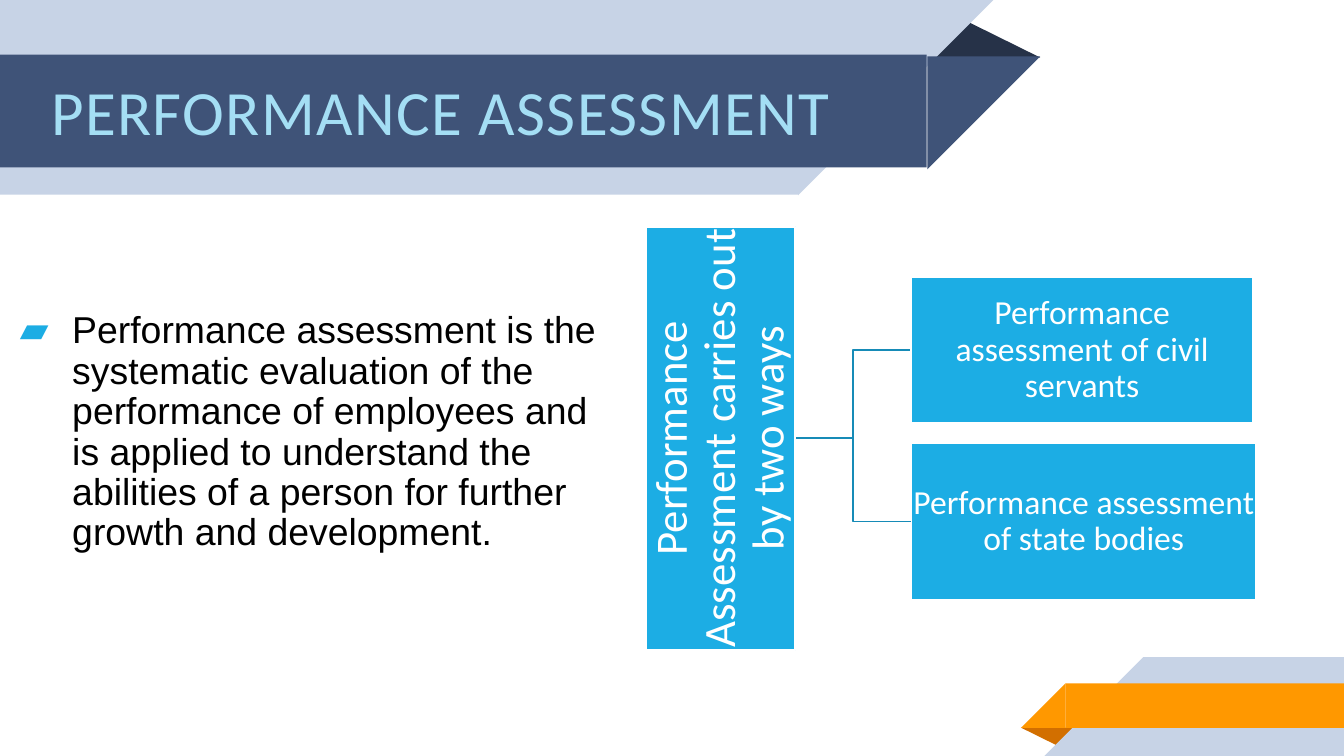
from lxml.etree import SubElement
from pptx import Presentation
from pptx.dml.color import RGBColor
from pptx.enum.shapes import MSO_CONNECTOR, MSO_SHAPE
from pptx.enum.text import MSO_ANCHOR, MSO_AUTO_SIZE, PP_ALIGN
from pptx.oxml.ns import qn
from pptx.util import Pt

COLORS = {
    "pale": "C7D3E6",
    "navy": "3F5378",
    "dark_navy": "263248",
    "orange": "FF9800",
    "dark_orange": "D26F00",
    "title": "A4DEF4",
    "accent": "1CADE4",
    "branch": "168BB7",
    "white": "FFFFFF",
    "black": "000000",
}


def color(name):
    return RGBColor.from_string(COLORS[name])


def add_block(slide, kind, box, fill, rotation=0):
    block = slide.shapes.add_shape(kind, *map(Pt, box))
    block.shadow.inherit = False
    block.fill.solid()
    block.fill.fore_color.rgb = color(fill)
    block.line.fill.background()
    block.rotation = rotation
    return block


def add_corner(slide, left, top, side, fill, rotation):
    add_block(slide, MSO_SHAPE.RIGHT_TRIANGLE, (left, top, side, side), fill, rotation)


def add_fold(slide, box, fill, rotation=0):
    fold = add_block(slide, MSO_SHAPE.ISOSCELES_TRIANGLE, box, fill, rotation)
    fold.adjustments[0] = 0.324


def add_ribbons(slide):
    rectangle = MSO_SHAPE.RECTANGLE
    add_fold(slide, (661, 13.7, 82, 27.4), "dark_navy")
    add_block(slide, rectangle, (0, 0, 570, 139), "pale")
    add_corner(slide, 570, 0, 139.5, "pale", 90)
    add_block(slide, rectangle, (0, 39, 662, 80.6), "navy")
    add_corner(slide, 662.4, 40.3, 80.6, "navy", 90)
    add_fold(slide, (729.4, 519.8, 41, 13.7), "dark_orange", 180)
    add_block(slide, rectangle, (816.5, 469.4, 143.5, 70.6), "pale")
    add_corner(slide, 745.9, 469.4, 70.6, "pale", 270)
    add_block(slide, rectangle, (761, 488.2, 199, 31.7), "orange")
    add_corner(slide, 729.3, 488.2, 31.7, "orange", 270)


def write(frame, text, font, size, ink, spacing, align, inset, anchor):
    frame.word_wrap = True
    frame.auto_size = MSO_AUTO_SIZE.NONE
    frame.vertical_anchor = anchor
    frame.margin_left = frame.margin_right = Pt(inset[0])
    frame.margin_top = frame.margin_bottom = Pt(inset[1])
    paragraph = frame.paragraphs[0]
    paragraph.alignment = align
    paragraph.line_spacing = spacing
    run = paragraph.add_run()
    run.text = text
    run.font.name = font
    run.font.size = Pt(size)
    run.font.color.rgb = color(ink)
    return paragraph


def place(placeholder, box):
    placeholder.left, placeholder.top, placeholder.width, placeholder.height = map(Pt, box)


def add_title(slide):
    title = slide.shapes.title
    place(title, (29.5, 43.2, 622, 80.6))
    paragraph = write(title.text_frame, "PERFORMANCE ASSESSMENT", "Calibri", 45, "title",
                      0.8, PP_ALIGN.LEFT, (7.2, 3.6), MSO_ANCHOR.MIDDLE)
    paragraph.runs[0].font._element.set("spc", "100")
    slide.shapes._spTree.append(title._element)


def add_definition(slide):
    definition = slide.placeholders[1]
    place(definition, (0, 219, 440, 200))
    paragraph = write(
        definition.text_frame,
        "Performance assessment is the systematic evaluation of the performance of "
        "employees and is applied to understand the abilities of a person for further "
        "growth and development.",
        "Arial", 26.7, "black", 0.9, PP_ALIGN.LEFT, (3.6, 3.6), MSO_ANCHOR.TOP)
    paragraph.space_before = Pt(8)
    properties = paragraph._p.get_or_add_pPr()
    properties.set("marL", str(Pt(48)))
    properties.set("indent", str(Pt(-37.4)))
    bullet_color = SubElement(properties, qn("a:buClr"))
    SubElement(bullet_color, qn("a:srgbClr"), val=COLORS["accent"])
    SubElement(properties, qn("a:buFont"), typeface="Arial")
    SubElement(properties, qn("a:buChar"), char="▰")


def add_branch(slide, start, end):
    branch = slide.shapes.add_connector(MSO_CONNECTOR.ELBOW, *map(Pt, start + end))
    branch.line.color.rgb = color("branch")
    branch.line.width = Pt(1.25)
    SubElement(branch._element.spPr, qn("a:effectLst"))


def add_node(slide, text, box, size, rotation=0):
    node = add_block(slide, MSO_SHAPE.RECTANGLE, box, "accent", rotation)
    node.line.color.rgb = color("white")
    node.line.width = Pt(1.25)
    write(node.text_frame, text, "Calibri", size, "white",
          0.9, PP_ALIGN.CENTER, (1.4, 1.4), MSO_ANCHOR.MIDDLE)


def add_hierarchy(slide):
    ways = [
        ("Performance assessment of civil servants", (651, 198, 244, 104.4)),
        ("Performance assessment of state bodies", (651, 316.8, 246.2, 111.6)),
    ]
    for text, box in ways:
        left, top, width, height = box
        add_branch(slide, (568, 312.8), (left, top + height / 2))
        add_node(slide, text, box, 24)
    add_node(slide, "Performance Assessment carries out by two ways",
             (363.6, 259.8, 302.4, 106.6), 32, 270)


def main():
    deck = Presentation()
    deck.slide_width, deck.slide_height = Pt(960), Pt(540)
    slide = deck.slides.add_slide(deck.slide_layouts[1])
    add_ribbons(slide)
    add_title(slide)
    add_definition(slide)
    add_hierarchy(slide)
    deck.save("out.pptx")


if __name__ == "__main__":
    main()
